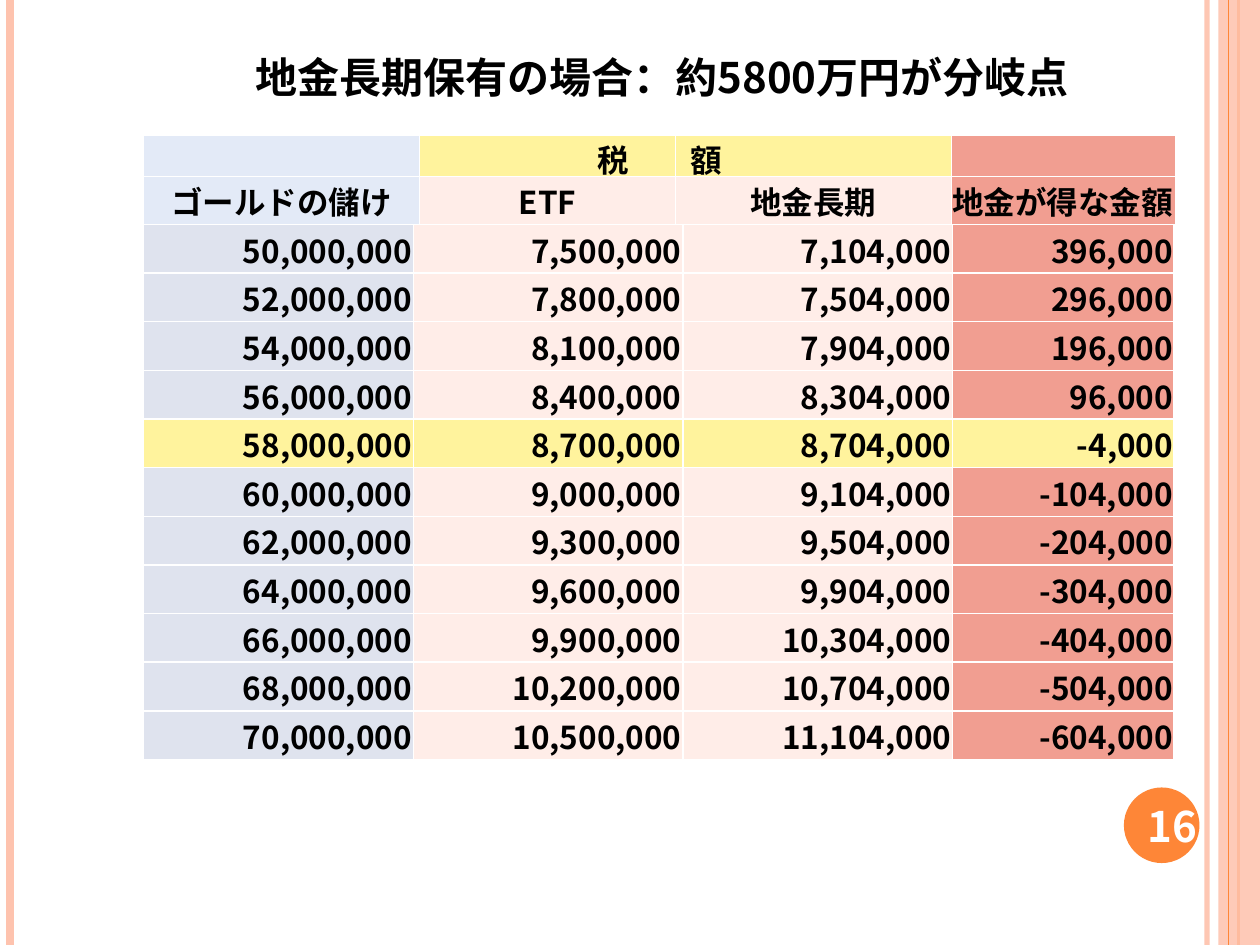
from lxml import etree
from pptx import Presentation
from pptx.dml.color import RGBColor
from pptx.enum.shapes import MSO_CONNECTOR, MSO_SHAPE
from pptx.enum.text import MSO_ANCHOR, PP_ALIGN as AL
from pptx.oxml.ns import qn
from pptx.util import Inches, Pt

FONT = "Noto Sans CJK JP"
C = {"white": "FFFFFF", "black": "000000", "peach": "FEC3AE", "orange": "FE8637",
     "gain": "DFE3EE", "gain_head": "E3EAF7", "tax": "FFEDE8",
     "diff": "F19E91", "mark": "FFF39D"}


def write(tf, text, size, color, align):
    p = tf.paragraphs[0]
    p.text = text
    p.alignment = align
    p.font.size, p.font.bold, p.font.name = Pt(size), True, FONT
    p.font.color.rgb = RGBColor.from_string(C[color])
    rpr = p._p.pPr.find(qn("a:defRPr"))
    etree.SubElement(rpr, qn("a:ea"), typeface=FONT)


def style_cell(cell, text, fill, align):
    cell.margin_left = cell.margin_right = cell.margin_top = Inches(0.01)
    cell.margin_bottom = 0
    cell.vertical_anchor = MSO_ANCHOR.MIDDLE
    write(cell.text_frame, text, 18, "black", align)
    # White borders come before the fill in the cell properties
    tcpr = cell._tc.get_or_add_tcPr()
    for side in ("lnL", "lnR", "lnT", "lnB"):
        ln = etree.SubElement(tcpr, qn(f"a:{side}"), w=str(Pt(1)))
        solid = etree.SubElement(ln, qn("a:solidFill"))
        etree.SubElement(solid, qn("a:srgbClr"), val=C["white"])
    cell.fill.solid()
    cell.fill.fore_color.rgb = RGBColor.from_string(C[fill])


prs = Presentation()
prs.slide_width, prs.slide_height = Inches(10), Inches(7.5)
s = prs.slides.add_slide(prs.slide_layouts[6])

# Side stripes: x, colour, width, opacity; the band sits behind the last line
for x, color, width, alpha in [(9.58, "peach", 3, 93), (0.08, "peach", 4.5, 100),
                               (9.83, "orange", 1.5, 100), (9.67, "peach", None, 87),
                               (9.75, "orange", 0.75, 100)]:
    if width is None:
        sp = s.shapes.add_shape(MSO_SHAPE.RECTANGLE, Inches(x), 0, Inches(0.33), Inches(7.5))
        sp.shadow.inherit = False
        sp.line.fill.background()
        fill = sp.fill
    else:
        sp = s.shapes.add_connector(MSO_CONNECTOR.STRAIGHT, Inches(x), 0, Inches(x), Inches(7.5))
        sp.line.width = Pt(width)
        fill = sp.line.fill
    fill.solid()
    fill.fore_color.rgb = RGBColor.from_string(C[color])
    sppr = sp._element.spPr
    if width is not None:
        etree.SubElement(sppr, qn("a:effectLst"))
    if alpha < 100:
        clr = next(sppr.iter(qn("a:srgbClr")))
        etree.SubElement(clr, qn("a:alpha"), val=str(alpha * 1000))

# Page number
sp = s.shapes.add_shape(MSO_SHAPE.OVAL, Inches(8.92), Inches(6.25), Inches(0.6), Inches(0.6))
sp.shadow.inherit = False
sp.fill.solid()
sp.fill.fore_color.rgb = RGBColor.from_string(C["orange"])
sp.line.fill.background()
tf = s.shapes.add_textbox(Inches(8.89), Inches(6.27), Inches(0.83), Inches(0.57)).text_frame
tf.word_wrap = True
tf.vertical_anchor = MSO_ANCHOR.MIDDLE
write(tf, "16", 24, "white", AL.CENTER)

# Tax on each gain: 15% for the ETF, a rising amount for bullion
body = []
for i in range(11):
    gain = 50_000_000 + 2_000_000 * i
    etf = gain * 15 // 100
    bullion = 7_104_000 + 400_000 * i
    fills = ["mark"] * 4 if gain == 58_000_000 else ["gain", "tax", "tax", "diff"]
    body.append([(f"{v:,}", f, AL.RIGHT)
                 for v, f in zip((gain, etf, bullion, etf - bullion), fills)])

head = [
    [("", "gain_head", AL.CENTER), ("税", "mark", AL.RIGHT),
     ("額", "mark", AL.LEFT), ("", "diff", AL.CENTER)],
    [("ゴールドの儲け", "gain_head", AL.CENTER), ("ETF", "tax", AL.CENTER),
     ("地金長期", "tax", AL.CENTER), ("地金が得な金額", "diff", AL.LEFT)],
]

# Body table, then the heading table above it
for top, cols, heights, rows in [
        (1.78, [2.14, 2.14, 2.14, 1.76], [4.25 / 11] * 11, body),
        (1.07, [2.19, 2.03, 2.19, 1.78], [0.33, 0.38], head)]:
    table = s.shapes.add_table(len(rows), 4, Inches(1.14), Inches(top),
                               Inches(8.19), Inches(sum(heights))).table
    table.first_row = table.horz_banding = False
    for col, w in zip(table.columns, cols):
        col.width = Inches(w)
    for row, h, values in zip(table.rows, heights, rows):
        row.height = Inches(h)
        for cell, value in zip(row.cells, values):
            style_cell(cell, *value)

# Spread the two characters of the tax heading around the column edge
table.cell(0, 1).margin_right = Inches(0.37)
table.cell(0, 2).margin_left = Inches(0.12)

# Title
tf = s.shapes.add_textbox(Inches(1.93), Inches(0.36), Inches(7.17), Inches(0.5)).text_frame
tf.word_wrap = True
write(tf, "地金長期保有の場合：約5800万円が分岐点", 24, "black", AL.LEFT)

prs.save("out.pptx")
